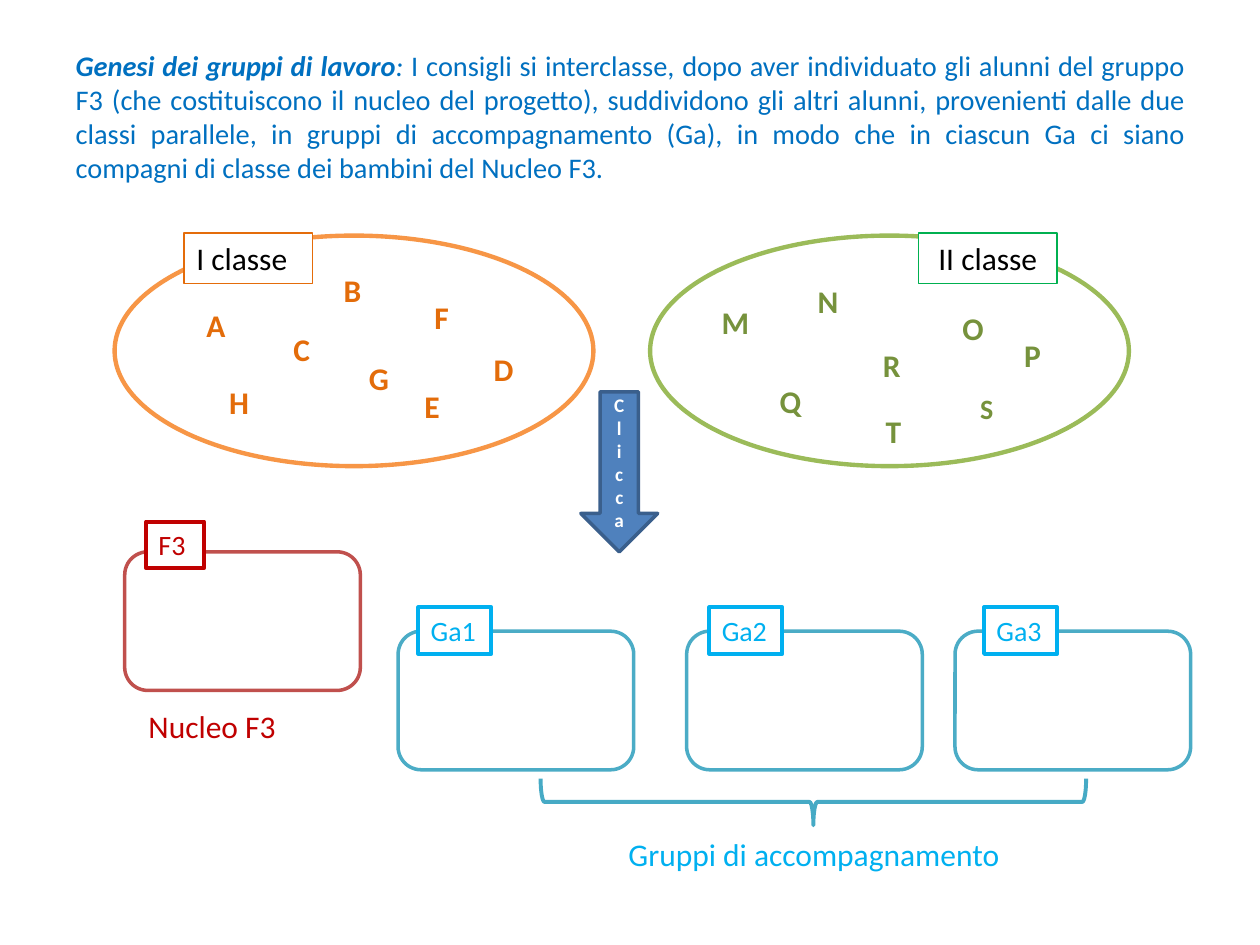
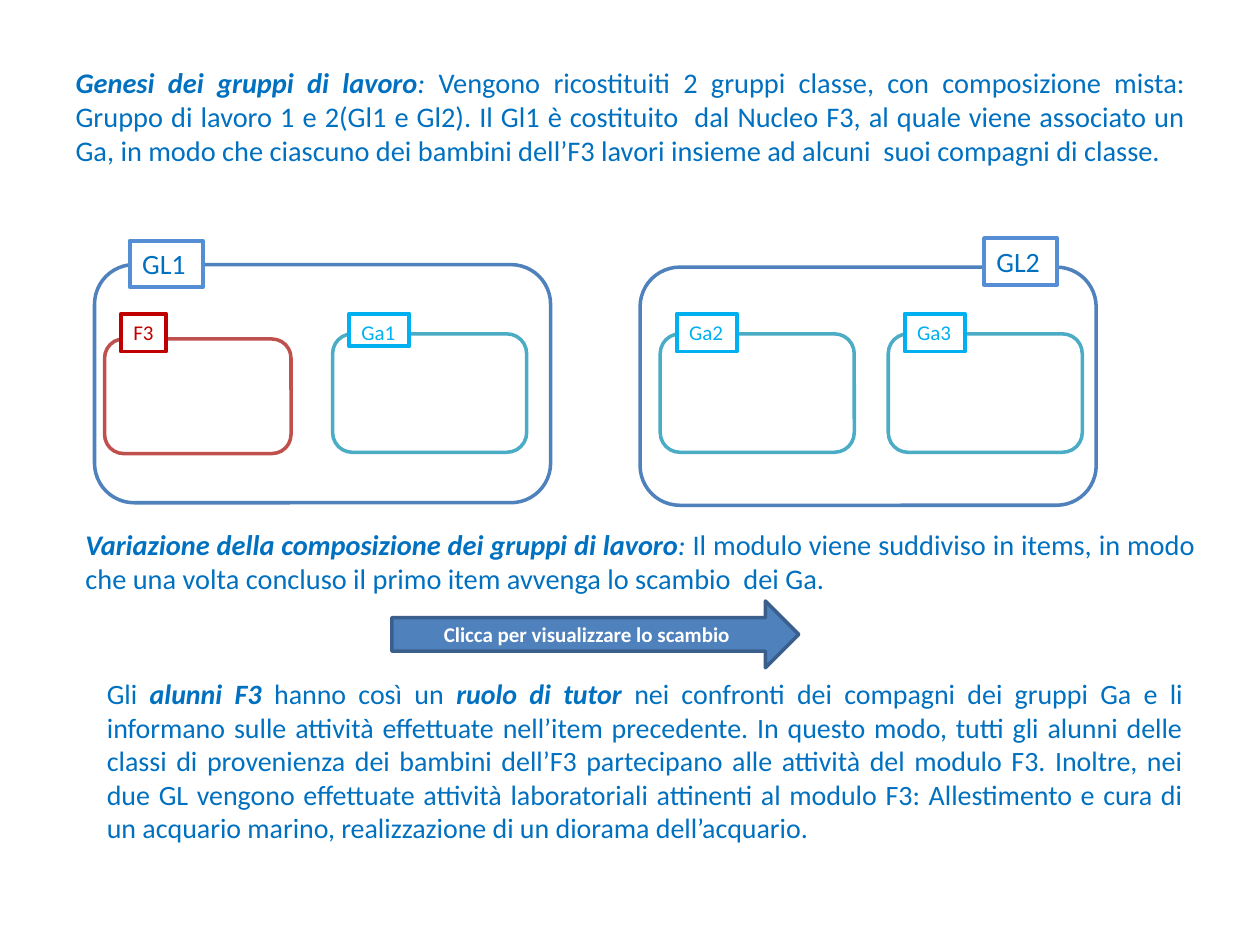
from pptx import Presentation
from pptx.dml.color import RGBColor
from pptx.enum import shapes, text
from pptx.util import Inches, Pt

BLUE = RGBColor(0x00, 0x70, 0xC0)
STEEL = RGBColor(0x4F, 0x81, 0xBD)
NAVY = RGBColor(0x3A, 0x5F, 0x8C)
SOFT = RGBColor(0x55, 0x8E, 0xD5)
SKY = RGBColor(0x00, 0xB0, 0xF0)
TEAL = RGBColor(0x4B, 0xAC, 0xC6)
BRACE = RGBColor(0x46, 0xAA, 0xC5)
RED = RGBColor(0xC0, 0x00, 0x00)
BRICK = RGBColor(0xC0, 0x50, 0x4D)
PEACH = RGBColor(0xF7, 0x96, 0x46)
RUST = RGBColor(0xE3, 0x6C, 0x0A)
AMBER = RGBColor(0xE4, 0x6C, 0x0A)
LIME = RGBColor(0x9B, 0xBB, 0x59)
OLIVE = RGBColor(0x76, 0x92, 0x3C)
GREEN = RGBColor(0x00, 0xB0, 0x50)
BLACK = RGBColor(0x00, 0x00, 0x00)
WHITE = RGBColor(0xFF, 0xFF, 0xFF)

KIND = shapes.MSO_SHAPE
LEFT, MID, JUST = text.PP_ALIGN.LEFT, text.PP_ALIGN.CENTER, text.PP_ALIGN.JUSTIFY
TOP, HALF = text.MSO_ANCHOR.TOP, text.MSO_ANCHOR.MIDDLE

GENESIS = [("Genesi dei gruppi di lavoro", "bi"), (": ", "i")]
INTRO = GENESIS + [(
    "I consigli si interclasse, dopo aver individuato gli alunni del gruppo F3 "
    "(che costituiscono il nucleo del progetto), suddividono gli altri alunni, "
    "provenienti dalle due classi parallele, in gruppi di accompagnamento (Ga), "
    "in modo che in ciascun Ga ci siano compagni di classe dei bambini del Nucleo F3.", "")]
MIX = GENESIS + [(
    "Vengono ricostituiti 2 gruppi classe, con composizione mista: Gruppo di lavoro "
    "1 e 2(Gl1 e Gl2). Il Gl1 è costituito  dal Nucleo F3, al quale viene associato un "
    "Ga, in modo che ciascuno dei bambini dell’F3 lavori insieme ad alcuni  suoi "
    "compagni di classe.", "")]
SWAP = [
    ("Variazione della composizione dei gruppi di lavoro", "bi"), (": ", "i"),
    ("Il modulo viene suddiviso in items, in modo che una volta concluso il primo "
     "item avvenga lo scambio  dei Ga.", "")]
TUTOR = [
    ("Gli ", ""), ("alunni F3 ", "bi"), ("hanno così un ", ""), ("ruolo di tutor ", "bi"),
    ("nei confronti dei compagni dei gruppi Ga e li informano sulle attività effettuate "
     "nell’item precedente. In questo modo, tutti gli alunni delle classi di provenienza "
     "dei bambini dell’F3 partecipano alle attività del modulo F3. Inoltre, nei due GL "
     "vengono effettuate attività laboratoriali attinenti al modulo F3: Allestimento e "
     "cura di un acquario marino, realizzazione di un diorama dell’acquario.", "")]

CLASSES = [
    {"x": 0.91, "line": PEACH, "ink": RUST, "pupils": [
        ("A", 1.54, 2.38), ("B", 2.63, 2.1), ("C", 2.23, 2.57), ("D", 3.82, 2.73),
        ("E", 3.27, 3.02), ("F", 3.35, 2.32), ("G", 2.83, 2.8), ("H", 1.72, 2.99)]},
    {"x": 5.16, "line": LIME, "ink": OLIVE, "pupils": [
        ("M", 5.63, 2.36), ("N", 6.39, 2.19), ("O", 7.54, 2.4), ("P", 8.03, 2.62),
        ("Q", 6.09, 2.98), ("R", 6.91, 2.7), ("S", 7.68, 3.06), ("T", 6.93, 3.22)]},
]
NAMES = [("I classe", 1.46, 1.02, AMBER, LEFT), ("II classe", 7.29, 1.1, GREEN, MID)]
CORE = {"edge": BRICK, "ink": RED}
GROUP = {"edge": TEAL, "ink": SKY}
TEAMS = [
    ("F3", (0.99, 4.38), (1.16, 4.14, 0.46, 0.37), CORE),
    ("Ga1", (3.16, 5.01), (3.32, 4.82, 0.58, 0.37), GROUP),
    ("Ga2", (5.45, 5.01), (5.63, 4.82, 0.58, 0.37), GROUP),
    ("Ga3", (7.58, 5.01), (7.81, 4.82, 0.58, 0.37), GROUP),
]
NOTES = [
    ("Nucleo F3", (1.08, 5.56, 1.49, 0.4), RED, LEFT),
    ("Gruppi di accompagnamento", (3.55, 6.58, 5.82, 0.4), SKY, MID),
]
LABS = [
    ("GL1", (0.75, 2.1, 3.62, 1.89), (1.03, 1.91, 0.58, 0.37)),
    ("GL2", (5.08, 2.12, 3.62, 1.89), (7.81, 1.89, 0.58, 0.37)),
]
PARTS = [
    ("F3", (0.83, 2.69, 1.48, 0.91), (0.96, 2.49, 0.36, 0.3), CORE),
    ("Ga1", (2.64, 2.65, 1.54, 0.94), (2.77, 2.49, 0.48, 0.26), GROUP),
    ("Ga2", (5.24, 2.65, 1.54, 0.94), (5.37, 2.49, 0.48, 0.3), GROUP),
    ("Ga3", (7.05, 2.65, 1.54, 0.94), (7.18, 2.49, 0.48, 0.3), GROUP),
]


def place(at):
    return [Inches(n) for n in at]


def write(shape, paras, size, ink, align=LEFT, anchor=TOP, wrap=True):
    frame = shape.text_frame
    for key, value in {"word_wrap": wrap, "vertical_anchor": anchor,
                       "auto_size": text.MSO_AUTO_SIZE.NONE}.items():
        setattr(frame, key, value)
    for i, runs in enumerate(paras):
        para = frame.add_paragraph() if i else frame.paragraphs[0]
        para.alignment = align
        for words, style in runs:
            run = para.add_run()
            run.text = words
            run.font.color.rgb = ink
            for key, value in {"name": "Calibri", "size": Pt(size), "bold": "b" in style,
                               "italic": "i" in style}.items():
                setattr(run.font, key, value)


def draw(home, kind, at, edge, width, fill=None):
    shape = home.add_shape(kind, *place(at))
    shape.shadow.inherit = False
    shape.line.color.rgb = edge
    shape.line.width = Pt(width)
    if fill is None:
        shape.fill.background()
    else:
        shape.fill.solid()
        shape.fill.fore_color.rgb = fill
    return shape


def label(home, at, paras, size, ink, **kw):
    write(home.add_textbox(*place(at)), paras, size, ink, **kw)


def tag(home, words, at, edge, ink, size, width=2.25, align=LEFT):
    shape = draw(home, KIND.RECTANGLE, at, edge, width, WHITE)
    write(shape, [[(words, "")]], size, ink, align)


def arrow(home, kind, at, lines, size):
    shape = draw(home, kind, at, NAVY, 2, STEEL)
    write(shape, [[(line, "b")] for line in lines], size, WHITE, MID, HALF)


def start(deck, runs):
    page = deck.slides.add_slide(deck.slide_layouts[5]).shapes
    title = page.title
    title.left, title.top, title.width, title.height = place((0.5, 0.3, 9, 1.25))
    write(title, [runs], 16.2, BLUE, JUST, HALF)
    return page


def genesis(deck):
    page = start(deck, INTRO)
    for room in CLASSES:
        draw(page, KIND.OVAL, (room["x"], 1.87, 3.8, 1.83), room["line"], 2.5)
        for name, x, y in room["pupils"]:
            label(page, (x, y, 0.36, 0.4), [[(name, "b")]],
                  16 if name == "S" else 18, room["ink"], wrap=False)
    for name, x, w, edge, align in NAMES:
        tag(page, name, (x, 1.85, w, 0.4), edge, BLACK, 18, 0.75, align)
    arrow(page, KIND.DOWN_ARROW, (4.61, 3.11, 0.61, 1.27), ["Cl", "i", "cca"], 11)
    for name, spot, flag, look in TEAMS:
        draw(page, KIND.ROUNDED_RECTANGLE, (*spot, 1.87, 1.1), look["edge"], 2)
        tag(page, name, flag, look["ink"], look["ink"], 16)
    for words, at, ink, align in NOTES:
        label(page, at, [[(words, "")]], 18, ink, align=align)
    brace = draw(page, KIND.RIGHT_BRACE, (6.27, 4.2, 0.37, 4.33), BRACE, 2.25)
    brace.rotation = 90


def exchange(deck):
    page = start(deck, MIX)
    for name, at, flag in LABS:
        draw(page, KIND.ROUNDED_RECTANGLE, at, STEEL, 2)
        tag(page, name, flag, SOFT, BLUE, 16)
    for name, at, flag, look in PARTS:
        team = page.add_group_shape().shapes
        draw(team, KIND.ROUNDED_RECTANGLE, at, look["edge"], 2)
        tag(team, name, flag, look["ink"], look["ink"], 12)
    label(page, (0.58, 4.14, 9, 0.62), [SWAP], 16.2, BLUE, align=JUST, anchor=HALF)
    arrow(page, KIND.RIGHT_ARROW, (3.11, 4.77, 3.23, 0.53),
          ["Clicca per visualizzare lo scambio"], 12)
    label(page, (0.75, 5.32, 8.74, 1.45), [TUTOR], 16, BLUE, align=JUST)


def main():
    deck = Presentation()
    deck.slide_width, deck.slide_height = Inches(10), Inches(7.5)
    genesis(deck)
    exchange(deck)
    deck.save("out.pptx")


if __name__ == "__main__":
    main()
